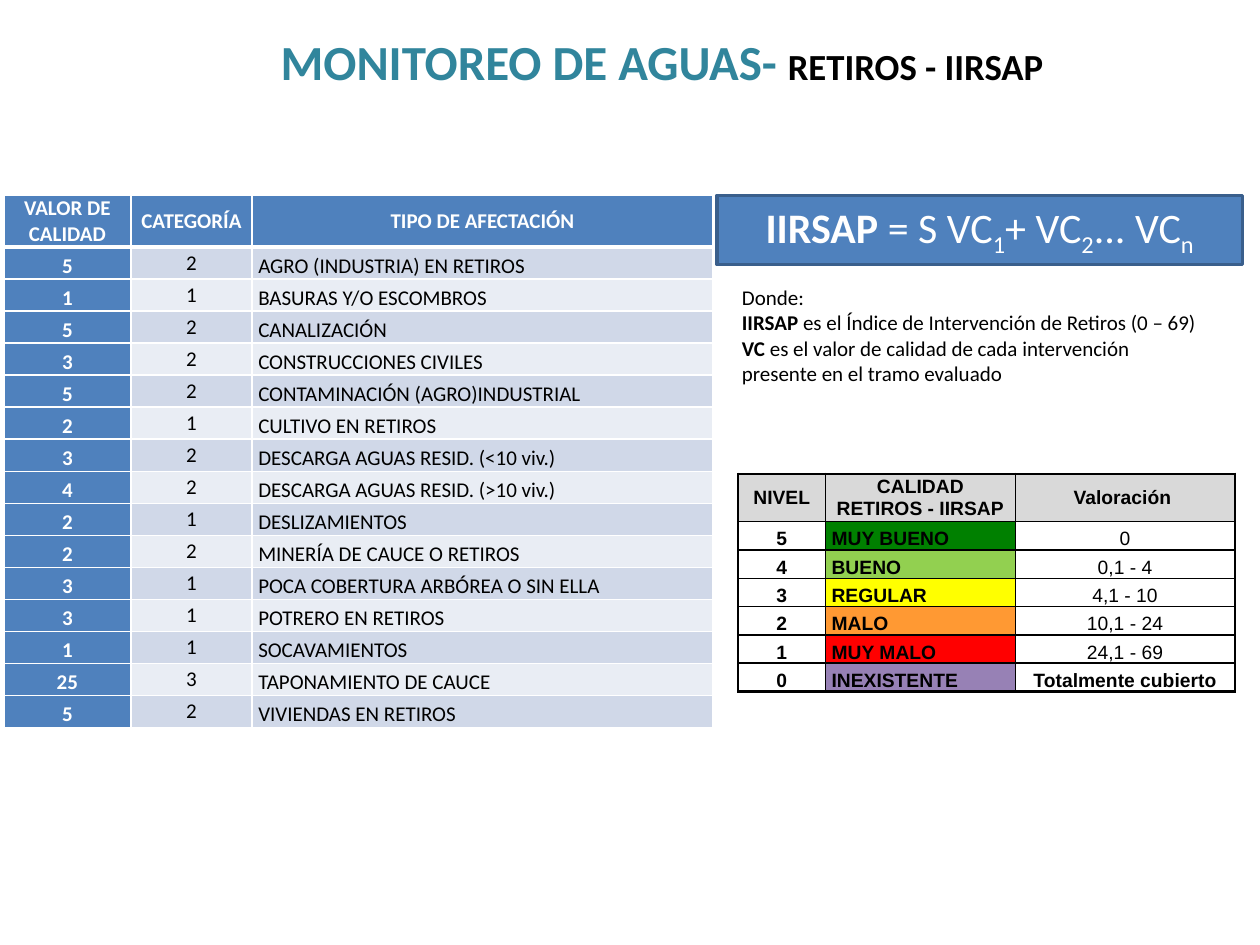
"""Build the IIRSAP stream-buffer monitoring slide."""
import lxml.etree
import pptx
import pptx.dml.color
import pptx.enum.shapes
import pptx.enum.text
import pptx.oxml.ns
import pptx.util

Inches = pptx.util.Inches
Pt = pptx.util.Pt
RGB = pptx.dml.color.RGBColor
ANCHOR = pptx.enum.text.MSO_ANCHOR
ALIGN = pptx.enum.text.PP_ALIGN
qn = pptx.oxml.ns.qn

BLACK = RGB(0x00, 0x00, 0x00)
WHITE = RGB(0xFF, 0xFF, 0xFF)
TEAL = RGB(0x31, 0x85, 0x9C)
BLUE = RGB(0x4F, 0x81, 0xBD)
NAVY = RGB(0x3A, 0x5F, 0x8C)
GRAY = RGB(0xD9, 0xD9, 0xD9)
BANDS = (RGB(0xD0, 0xD8, 0xE8), RGB(0xE9, 0xED, 0xF4))
GREEN = RGB(0x00, 0x80, 0x00)
LIME = RGB(0x92, 0xD0, 0x50)
YELLOW = RGB(0xFF, 0xFF, 0x00)
ORANGE = RGB(0xFF, 0x99, 0x33)
RED = RGB(0xFF, 0x00, 0x00)
PURPLE = RGB(0x97, 0x81, 0xB5)

IMPACT_HEAD = ("VALOR DE CALIDAD", "CATEGORÍA", "TIPO DE AFECTACIÓN")
IMPACTS = [
    (5, 2, "AGRO (INDUSTRIA) EN RETIROS"),
    (1, 1, "BASURAS Y/O ESCOMBROS"),
    (5, 2, "CANALIZACIÓN"),
    (3, 2, "CONSTRUCCIONES CIVILES"),
    (5, 2, "CONTAMINACIÓN (AGRO)INDUSTRIAL"),
    (2, 1, "CULTIVO EN RETIROS"),
    (3, 2, "DESCARGA AGUAS RESID. (<10 viv.)"),
    (4, 2, "DESCARGA AGUAS RESID. (>10 viv.)"),
    (2, 1, "DESLIZAMIENTOS"),
    (2, 2, "MINERÍA DE CAUCE O RETIROS"),
    (3, 1, "POCA COBERTURA ARBÓREA O SIN ELLA"),
    (3, 1, "POTRERO EN RETIROS"),
    (1, 1, "SOCAVAMIENTOS"),
    (25, 3, "TAPONAMIENTO DE CAUCE"),
    (5, 2, "VIVIENDAS EN RETIROS"),
]
LEVEL_HEAD = ("NIVEL", "CALIDAD RETIROS - IIRSAP", "Valoración ")
LEVELS = [
    (5, "MUY BUENO", "0", GREEN),
    (4, "BUENO", "0,1 - 4", LIME),
    (3, "REGULAR", "4,1 - 10", YELLOW),
    (2, "MALO", "10,1 - 24", ORANGE),
    (1, "MUY MALO", "24,1 - 69", RED),
    (0, "INEXISTENTE", "Totalmente cubierto", PURPLE),
]


class SlideBuilder:
    """Hold the text style and current slide."""

    def __init__(self, s, font="Calibri"):
        self.s = s
        self.font = font

    def apply(self, obj, values):
        """Set each named attribute of an object."""
        for name, value in values.items():
            setattr(obj, name, value)

    def run(self, p, text, size, color, bold=False, sub=False, font=None):
        """Add one formatted run."""
        r = p.add_run()
        r.text = str(text)
        self.apply(r.font, {"size": Pt(size), "bold": bold, "name": font or self.font})
        r.font.color.rgb = color
        if sub:
            r.font._element.set("baseline", "-25000")

    def place(self, sp, left, top, width, height):
        """Move and size a shape."""
        self.apply(sp, {"left": Inches(left), "top": Inches(top),
                        "width": Inches(width), "height": Inches(height)})

    def title(self, box, runs):
        """Fill the title placeholder."""
        sp = self.s.shapes.title
        self.place(sp, *box)
        tf = sp.text_frame
        self.apply(tf, {"word_wrap": True, "vertical_anchor": ANCHOR.MIDDLE,
                        "auto_size": pptx.enum.text.MSO_AUTO_SIZE.NONE})
        p = tf.paragraphs[0]
        p.alignment = ALIGN.CENTER
        for text, size, color in runs:
            self.run(p, text, size, color, bold=True)

    def formula(self, box, runs):
        """Add the filled formula box."""
        sp = self.s.shapes.add_shape(
            pptx.enum.shapes.MSO_SHAPE.RECTANGLE, *map(Inches, box))
        sp.shadow.inherit = False
        sp.fill.solid()
        sp.fill.fore_color.rgb = BLUE
        sp.line.color.rgb = NAVY
        sp.line.width = Pt(2)
        sp.text_frame.vertical_anchor = ANCHOR.MIDDLE
        p = sp.text_frame.paragraphs[0]
        p.alignment = ALIGN.CENTER
        for text, style in runs:
            self.run(p, text, 24, WHITE, **style)

    def text(self, box, lines):
        """Add a wrapped box of term and meaning lines."""
        tf = self.s.shapes.add_textbox(*map(Inches, box)).text_frame
        tf.word_wrap = True
        for i, (term, meaning) in enumerate(lines):
            p = tf.add_paragraph() if i else tf.paragraphs[0]
            if term:
                self.run(p, term, 12, BLACK, bold=True)
            self.run(p, meaning, 12, BLACK)

    def borders(self, cell, color, widths):
        """Draw the four cell borders."""
        tcPr = cell._tc.get_or_add_tcPr()
        for side in "LRTB":
            ln = lxml.etree.SubElement(tcPr, qn(f"a:ln{side}"), w=str(Pt(widths[side])))
            fill = lxml.etree.SubElement(ln, qn("a:solidFill"))
            lxml.etree.SubElement(fill, qn("a:srgbClr"), val=str(color))

    def table(self, box, cols, head_height, rows, style):
        """Add a table whose style function describes each cell."""
        tb = self.s.shapes.add_table(len(rows), len(cols), *map(Inches, box)).table
        self.apply(tb, {"first_row": False, "horz_banding": False})
        for col, width in zip(tb.columns, cols):
            col.width = Inches(width)
        row_height = (box[3] - head_height) / (len(rows) - 1)
        for i, values in enumerate(rows):
            tb.rows[i].height = Inches(row_height if i else head_height)
            for j, value in enumerate(values):
                cell = tb.cell(i, j)
                fmt = style(i, j)
                self.apply(cell, {"margin_left": Inches(0.05), "margin_right": Inches(0.05),
                                  "margin_top": 0, "margin_bottom": 0,
                                  "vertical_anchor": fmt["anchor"]})
                self.borders(cell, fmt["line"], fmt["widths"])
                if fmt["fill"] is None:
                    cell.fill.background()
                else:
                    cell.fill.solid()
                    cell.fill.fore_color.rgb = fmt["fill"]
                p = cell.text_frame.paragraphs[0]
                p.alignment = fmt["align"]
                self.run(p, value, **fmt["font"])


def impact_style(i, j):
    """Describe a cell of the impact table."""
    blue = i == 0 or j == 0
    return {
        "anchor": ANCHOR.MIDDLE if i == 0 or j == 1 else ANCHOR.BOTTOM,
        "align": ALIGN.LEFT if i and j == 2 else ALIGN.CENTER,
        "fill": BLUE if blue else BANDS[(i - 1) % 2],
        "line": WHITE,
        "widths": {"L": 1, "R": 1, "T": 3 if i == 1 else 1, "B": 1 if i else 3},
        "font": {"size": 12, "color": WHITE if blue else BLACK, "bold": blue},
    }


def level_style(i, j):
    """Describe a cell of the quality level table."""
    last = len(LEVELS)
    fills = (WHITE, LEVELS[i - 1][3], None) if i else (GRAY,) * 3
    return {
        "anchor": ANCHOR.BOTTOM if i else ANCHOR.MIDDLE,
        "align": ALIGN.LEFT if i and j == 1 else ALIGN.CENTER,
        "fill": fills[j],
        "line": BLACK,
        "widths": {"L": 1 if j else 1.5, "R": 1.5 if j == 2 else 1,
                   "T": 1 if i else 1.5, "B": 1.5 if i == last else 1},
        "font": {"size": 11, "color": BLACK, "font": "Arial",
                 "bold": j < 2 or i in (0, last)},
    }


def main():
    """Build and save the slide."""
    prs = pptx.Presentation()
    prs.slide_width, prs.slide_height = Inches(10), Inches(7.5)
    b = SlideBuilder(prs.slides.add_slide(prs.slide_layouts[5]))
    b.table((5.86, 3.76, 3.94, 1.73), (0.69, 1.51, 1.74), 0.38,
            [LEVEL_HEAD] + [level[:3] for level in LEVELS], level_style)
    b.title((0.63, 0.13, 9.25, 0.71),
            [("MONITOREO DE AGUAS- ", 28, TEAL), ("RETIROS - IIRSAP", 21, BLACK)])
    sub = {"sub": True}
    b.formula((5.69, 1.55, 4.17, 0.55),
              [("IIRSAP ", {"bold": True}), ("= S VC", {}), ("1", sub),
               ("+ VC", {}), ("2", sub), ("... VC", {}), ("n", sub)])
    b.table((0.03, 1.55, 5.64, 4.23), (1.01, 0.96, 3.66), 0.41,
            [IMPACT_HEAD] + IMPACTS, impact_style)
    b.text((5.79, 2.21, 3.9, 0.91),
           [("", "Donde:"),
            ("IIRSAP", " es el Índice de Intervención de Retiros (0 – 69)"),
            ("VC", " es el valor de calidad de cada intervención presente en el tramo evaluado")])
    prs.save("out.pptx")


if __name__ == "__main__":
    main()
